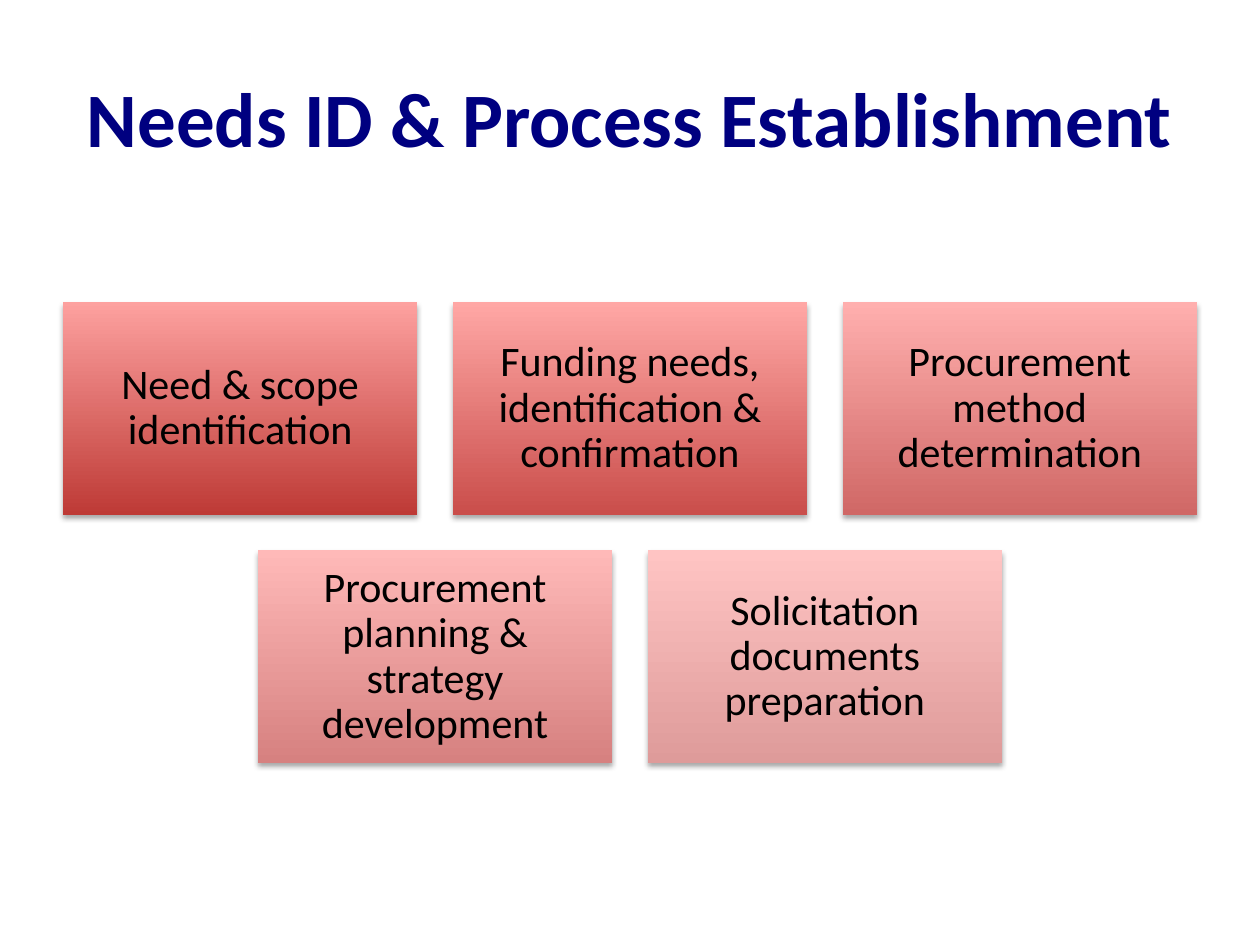
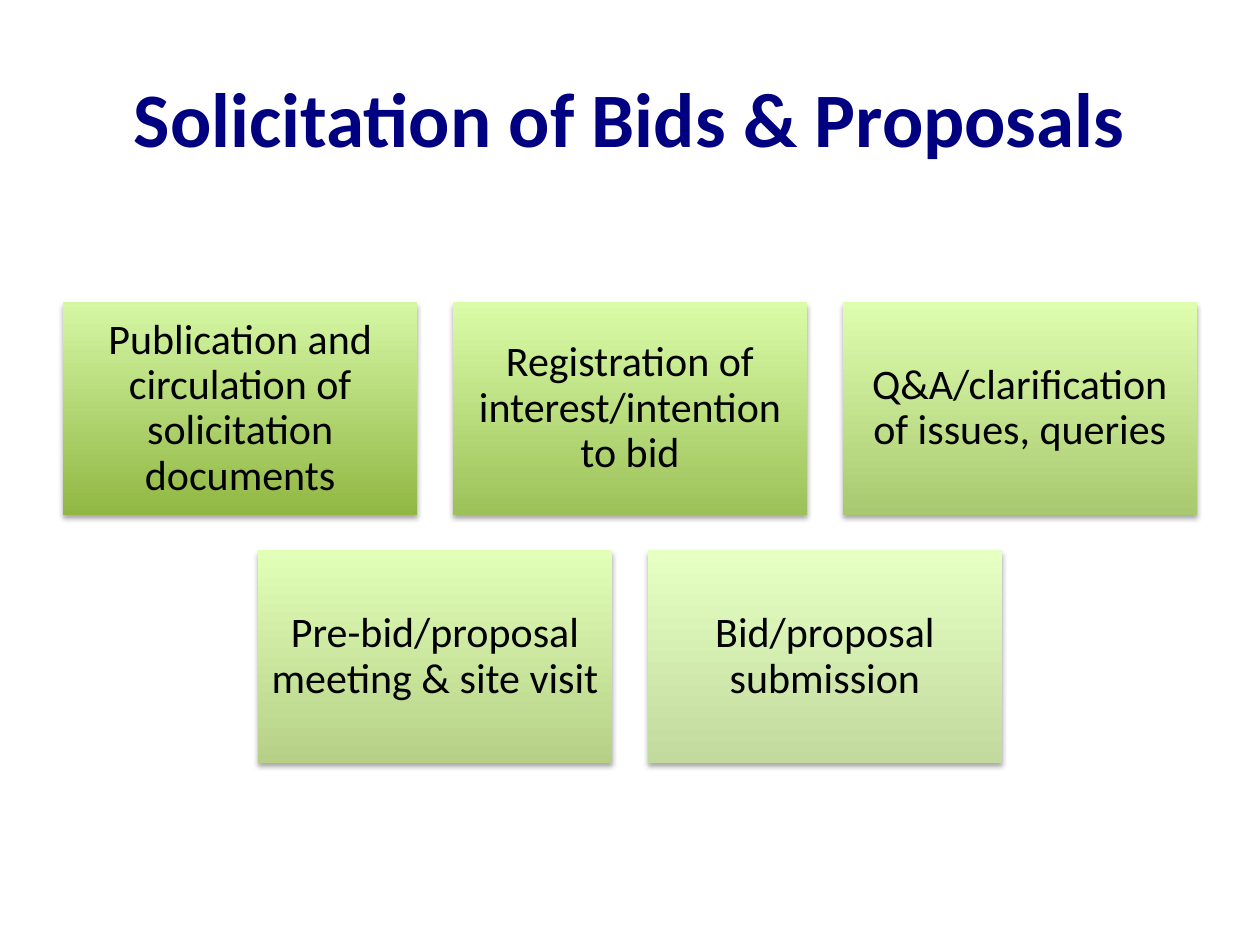
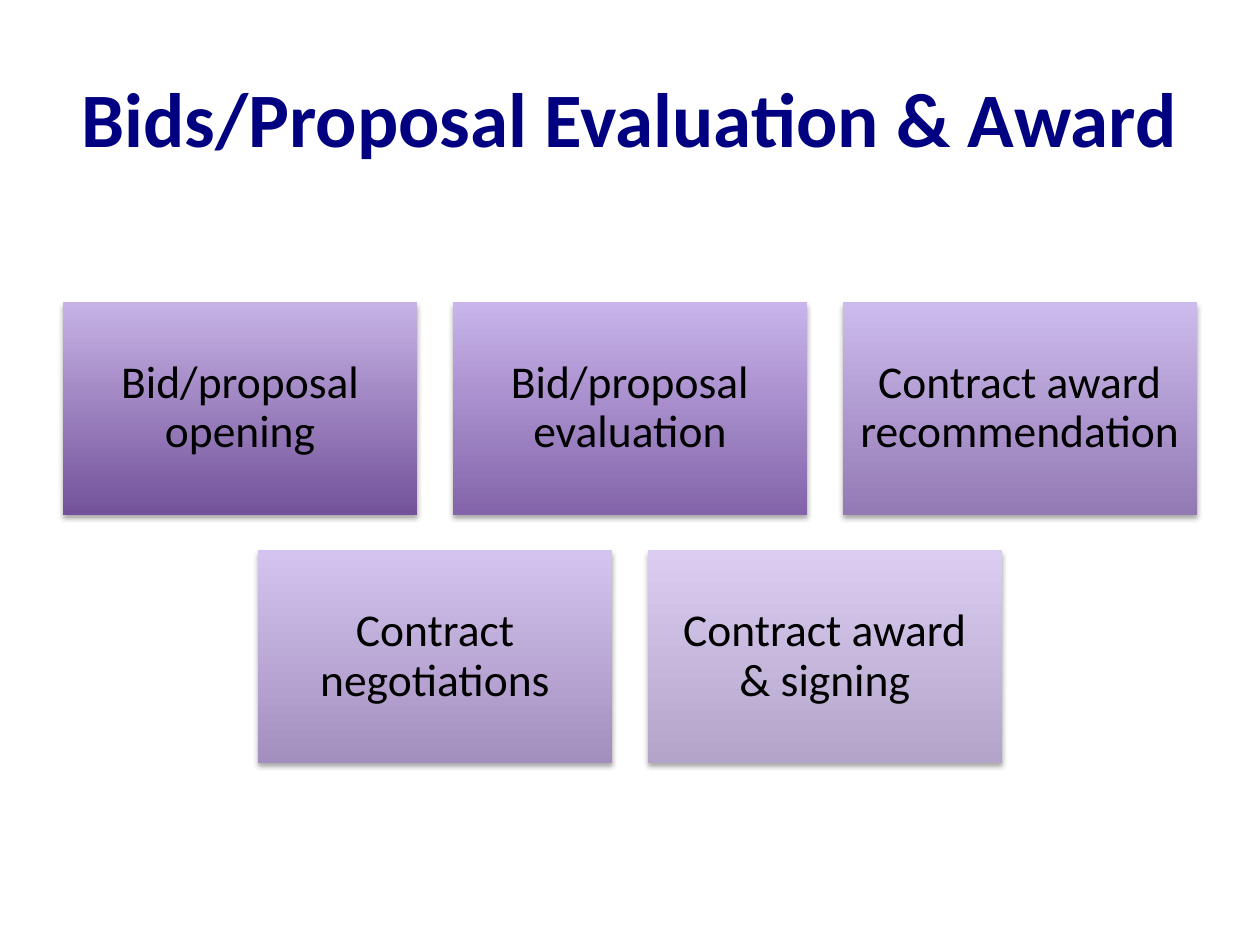
from lxml import etree
from pptx import Presentation
from pptx.dml.color import RGBColor
from pptx.enum.shapes import MSO_SHAPE
from pptx.enum.text import MSO_ANCHOR, PP_ALIGN
from pptx.oxml.ns import qn
from pptx.util import Emu, Inches, Pt

RECTANGLE = MSO_SHAPE.RECTANGLE
CENTER = PP_ALIGN.CENTER
MIDDLE = MSO_ANCHOR.MIDDLE

FONT = "Calibri"
NAVY, BLACK = "000080", "000000"

# Each card: text, colour at the bottom, colour at the top
PAGES = [
    {"title": "Needs ID & Process Establishment", "size": 24, "inset": 0.1, "cards": [
        ("Need & scope identification", "BE3A36", "FDA19F"),
        ("Funding needs, identification & confirmation", "CA4E4B", "FFA7A5"),
        ("Procurement method determination", "D06866", "FFAFAE"),
        ("Procurement planning & strategy development", "D68180", "FFB9B8"),
        ("Solicitation documents preparation", "DE9B9A", "FFC4C3"),
    ]},
    {"title": "Solicitation of Bids & Proposals", "size": 24, "inset": 0.1, "cards": [
        ("Publication and circulation of solicitation documents", "91B743", "D5F7A5"),
        ("Registration of interest/intention to bid", "9DC159", "DAFCA8"),
        ("Q&A/clarification of issues, queries", "A9C970", "DEFEAF"),
        ("Pre-bid/proposal meeting & site visit", "B6D187", "E2FFB8"),
        ("Bid/proposal submission", "C3DA9E", "E6FFC3"),
    ]},
    {"title": "Bids/Proposal Evaluation & Award", "size": 26, "inset": 0.11, "cards": [
        ("Bid/proposal opening", "73529B", "C6B2E4"),
        ("Bid/proposal evaluation", "8364AA", "C9B4EB"),
        ("Contract award recommendation", "937AB4", "CEBBED"),
        ("Contract negotiations", "A38FBE", "D4C3EF"),
        ("Contract award\v& signing", "B3A4C9", "DBCCF2"),
    ]},
]

SLIDE_WIDTH, SLIDE_HEIGHT = Inches(10), Inches(7.5)
MARGIN = SLIDE_WIDTH * 0.05
CONTENT_WIDTH = SLIDE_WIDTH - 2 * MARGIN
TITLE_TOP, TITLE_HEIGHT = SLIDE_HEIGHT * 0.04, SLIDE_HEIGHT / 6
COLUMNS = 3
GAP_SHARE = 0.1  # gap between cards, as a share of the card width
CARD_WIDTH = CONTENT_WIDTH / (COLUMNS + (COLUMNS - 1) * GAP_SHARE)
CARD_HEIGHT = CARD_WIDTH * 0.6
GAP = CARD_WIDTH * GAP_SHARE
CARDS_TOP = SLIDE_HEIGHT * 0.32


def color(value):
    return RGBColor.from_string(value)


def place(shape, left, top, width, height):
    shape.left, shape.top = Emu(round(left)), Emu(round(top))
    shape.width, shape.height = Emu(round(width)), Emu(round(height))


def write(shape, text, size, ink, bold=False, spacing=1.0, inset=0.1):
    frame = shape.text_frame
    frame.text = text
    frame.word_wrap = True
    frame.vertical_anchor = MIDDLE
    frame.margin_left = frame.margin_right = Inches(inset)
    frame.margin_top = frame.margin_bottom = Inches(inset)
    para = frame.paragraphs[0]
    para.alignment = CENTER
    para.line_spacing = spacing
    for span in para.runs:
        span.font.name = FONT
        span.font.size = Pt(size)
        span.font.bold = bold
        span.font.color.rgb = color(ink)


def add_soft_shadow(shape):
    shape.shadow.inherit = False
    effects = shape.element.spPr.find(qn("a:effectLst"))
    shadow = etree.SubElement(effects, qn("a:outerShdw"), blurRad=str(Pt(3.1)),
                              dist=str(Pt(1.8)), dir="5400000", rotWithShape="0")
    shade = etree.SubElement(shadow, qn("a:srgbClr"), val=BLACK)
    etree.SubElement(shade, qn("a:alpha"), val="35000")


def fill_upward(shape, bottom, top):
    """Fill with a gradient that runs from bottom to top."""
    shape.fill.gradient()
    shape.fill.gradient_angle = 90
    for stop, value in zip(shape.fill.gradient_stops, (bottom, top)):
        stop.color.rgb = color(value)


def card_positions(count):
    """Yield left and top of each card, with every row centred."""
    for index in range(count):
        row, column = divmod(index, COLUMNS)
        in_row = min(COLUMNS, count - row * COLUMNS)
        row_width = in_row * CARD_WIDTH + (in_row - 1) * GAP
        left = (SLIDE_WIDTH - row_width) / 2 + column * (CARD_WIDTH + GAP)
        yield left, CARDS_TOP + row * (CARD_HEIGHT + GAP)


def add_page(deck, title, size, inset, cards):
    page = deck.slides.add_slide(deck.slide_layouts.get_by_name("Title Only"))
    heading = page.shapes.title
    place(heading, MARGIN, TITLE_TOP, CONTENT_WIDTH, TITLE_HEIGHT)
    write(heading, title, 44, NAVY, bold=True)
    for (text, bottom, top_color), (left, top) in zip(cards, card_positions(len(cards))):
        card = page.shapes.add_shape(RECTANGLE, 0, 0, 0, 0)
        place(card, left, top, CARD_WIDTH, CARD_HEIGHT)
        fill_upward(card, bottom, top_color)
        card.line.fill.background()
        add_soft_shadow(card)
        write(card, text, size, BLACK, spacing=0.9, inset=inset)


def main():
    deck = Presentation()
    deck.slide_width, deck.slide_height = SLIDE_WIDTH, SLIDE_HEIGHT
    for content in PAGES:
        add_page(deck, **content)
    deck.save("out.pptx")


if __name__ == "__main__":
    main()
